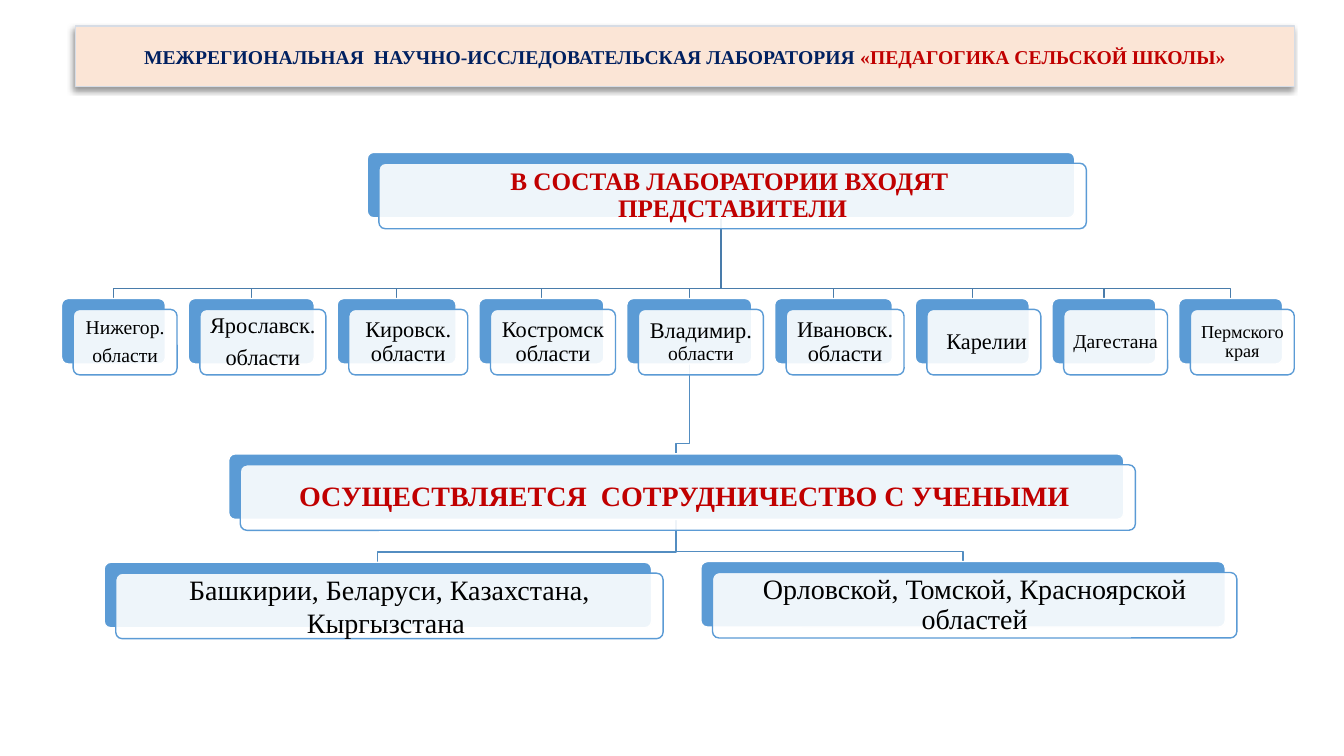
from lxml import etree
from pptx import Presentation
from pptx.dml.color import RGBColor
from pptx.enum import shapes, text
from pptx.oxml import ns
from pptx.util import Pt

BLUE = RGBColor(0x5B, 0x9B, 0xD5)
UPPER_LINK = RGBColor(0x49, 0x7C, 0xAB)
LOWER_LINK = RGBColor(0x53, 0x8D, 0xC1)
WHITE = RGBColor(0xFF, 0xFF, 0xFF)
BLACK = RGBColor(0, 0, 0)
RED = RGBColor(0xC0, 0, 0)
NAVY = RGBColor(0, 0x20, 0x60)
PEACH = RGBColor(0xFB, 0xE5, 0xD6)
PALE_GREY = RGBColor(0xD6, 0xDC, 0xE5)

FONT = "Times New Roman"
LINE_BREAK = "\n"
CARD_HEIGHT = 46.8
CARD_SHIFT_X, CARD_SHIFT_Y = 8.3, 7.8
LINK_DROP = 7.2
REGION_LEFT, REGION_TOP, REGION_GAP = 44, 213.2, 16.3

REGIONS = [
    (74.2, 14, [["Нижегор."], ["области"]]),
    (90, 16, [["Ярославск."], ["области"]]),
    (85, 16, [["Кировск. области"]]),
    (89.3, 16, [["Костромск области"]]),
    (89.3, 16, [["Владимир.", (" области", {"size": 14})]]),
    (84.2, 16, [["Ивановск. области"]]),
    (81.4, 16, [[" Карелии"]]),
    (74.2, 14, [["Дагестана"]]),
    (74.2, 13, [["Пермского края"]]),
]


def write_text(shape, paragraphs, *, size, color=BLACK, bold=False, spacing=0.9, margin=6.3):
    frame = shape.text_frame
    frame.word_wrap = True
    frame.auto_size = text.MSO_AUTO_SIZE.NONE
    frame.vertical_anchor = text.MSO_ANCHOR.MIDDLE
    frame.margin_left = frame.margin_right = Pt(margin)
    frame.margin_top = frame.margin_bottom = Pt(margin)
    for index, runs in enumerate(paragraphs):
        paragraph = frame.add_paragraph() if index else frame.paragraphs[0]
        paragraph.alignment = text.PP_ALIGN.CENTER
        paragraph.line_spacing = spacing
        paragraph.space_before = Pt(0)
        paragraph.space_after = Pt(0.35 * size)
        for item in runs:
            if item == LINE_BREAK:
                paragraph.add_line_break()
                continue
            words, changes = (item, {}) if isinstance(item, str) else item
            run = paragraph.add_run()
            run.text = words
            run.font.name = FONT
            run.font.size = Pt(changes.get("size", size))
            run.font.bold = bold
            run.font.color.rgb = changes.get("color", color)


def paint(shape, fill, line):
    shape.fill.solid()
    shape.fill.fore_color.rgb = fill
    shape.line.color.rgb = line
    shape.line.width = Pt(1)


def add_child(parent, tag, **attributes):
    return etree.SubElement(parent, ns.qn(tag), attributes)


def add_panel(slide, left, top, width, fill, line):
    panel = slide.shapes.add_shape(
        shapes.MSO_SHAPE.ROUNDED_RECTANGLE, Pt(left), Pt(top), Pt(width), Pt(CARD_HEIGHT))
    panel.adjustments[0] = 0.1
    panel.shadow.inherit = False
    paint(panel, fill, line)
    return panel


def add_card(slide, place, paragraphs, **text_format):
    left, top, width = place
    add_panel(slide, left, top, width, BLUE, WHITE)
    front = add_panel(slide, left + CARD_SHIFT_X, top + CARD_SHIFT_Y, width, WHITE, BLUE)
    white = front.element.spPr.find(ns.qn("a:solidFill")).find(ns.qn("a:srgbClr"))
    add_child(white, "a:alpha", val="90000")
    write_text(front, paragraphs, **text_format)


def add_link(slide, parent, child, color):
    start_x, start_y = parent[0] + parent[2] / 2, parent[1] + CARD_HEIGHT
    end_x, end_y = child[0] + child[2] / 2, child[1]
    bend_y = end_y - LINK_DROP
    builder = slide.shapes.build_freeform(Pt(start_x), Pt(start_y))
    corners = [(start_x, bend_y), (end_x, bend_y), (end_x, end_y)]
    builder.add_line_segments([(Pt(x), Pt(y)) for x, y in corners], close=False)
    link = builder.convert_to_shape()
    link.shadow.inherit = False
    link.fill.background()
    link.line.color.rgb = color
    link.line.width = Pt(1)


def format_title(title):
    title.left, title.top, title.width, title.height = Pt(54), Pt(18.7), Pt(870.5), Pt(43.2)
    properties = title.element.spPr
    outline = etree.Element(ns.qn("a:prstGeom"), prst="roundRect")
    add_child(outline, "a:avLst")
    properties.insert(1, outline)
    paint(title, PEACH, PALE_GREY)
    effects = add_child(properties, "a:effectLst")
    shadow = add_child(effects, "a:outerShdw", blurRad=str(Pt(4)), dist=str(Pt(3)),
                       dir="8100000", algn="tr", rotWithShape="0")
    shade = add_child(shadow, "a:srgbClr", val="000000")
    add_child(shade, "a:alpha", val="40000")
    write_text(title, [["МЕЖРЕГИОНАЛЬНАЯ  НАУЧНО-ИССЛЕДОВАТЕЛЬСКАЯ ЛАБОРАТОРИЯ ",
                        ("«ПЕДАГОГИКА СЕЛЬСКОЙ ШКОЛЫ»", {"color": RED})]],
               size=14, color=NAVY, bold=True, spacing=1.0)


def region_places():
    places, left = [], REGION_LEFT
    for width, _, _ in REGIONS:
        places.append((left, REGION_TOP, width))
        left += width + REGION_GAP
    return places


def main():
    presentation = Presentation()
    presentation.slide_width, presentation.slide_height = Pt(960), Pt(540)
    slide = presentation.slides.add_slide(presentation.slide_layouts[5])
    format_title(slide.shapes.title)

    members = (262.3, 108.8, 505.4)
    scientists = (163.3, 324.2, 639.4)
    countries = (74.4, 401.6, 391)
    provinces = (500.6, 401.1, 374.6)
    regions = region_places()

    for region in regions:
        add_link(slide, members, region, UPPER_LINK)
    add_link(slide, regions[4], scientists, LOWER_LINK)
    for partner in (countries, provinces):
        add_link(slide, scientists, partner, LOWER_LINK)

    add_card(slide, members, [["В СОСТАВ ЛАБОРАТОРИИ ВХОДЯТ ", LINE_BREAK, "ПРЕДСТАВИТЕЛИ"]],
             size=18, color=RED, bold=True)
    for place, (_, size, paragraphs) in zip(regions, REGIONS):
        add_card(slide, place, paragraphs, size=size, margin=5.5)
    add_card(slide, scientists, [["ОСУЩЕСТВЛЯЕТСЯ  СОТРУДНИЧЕСТВО С УЧЕНЫМИ "]],
             size=20, color=RED, bold=True)
    add_card(slide, countries, [["Башкирии, Беларуси, Казахстана, Кыргызстана "]],
             size=20, spacing=1.0)
    add_card(slide, provinces, [["Орловской, Томской, Красноярской областей"]], size=20)

    presentation.save("out.pptx")


if __name__ == "__main__":
    main()
